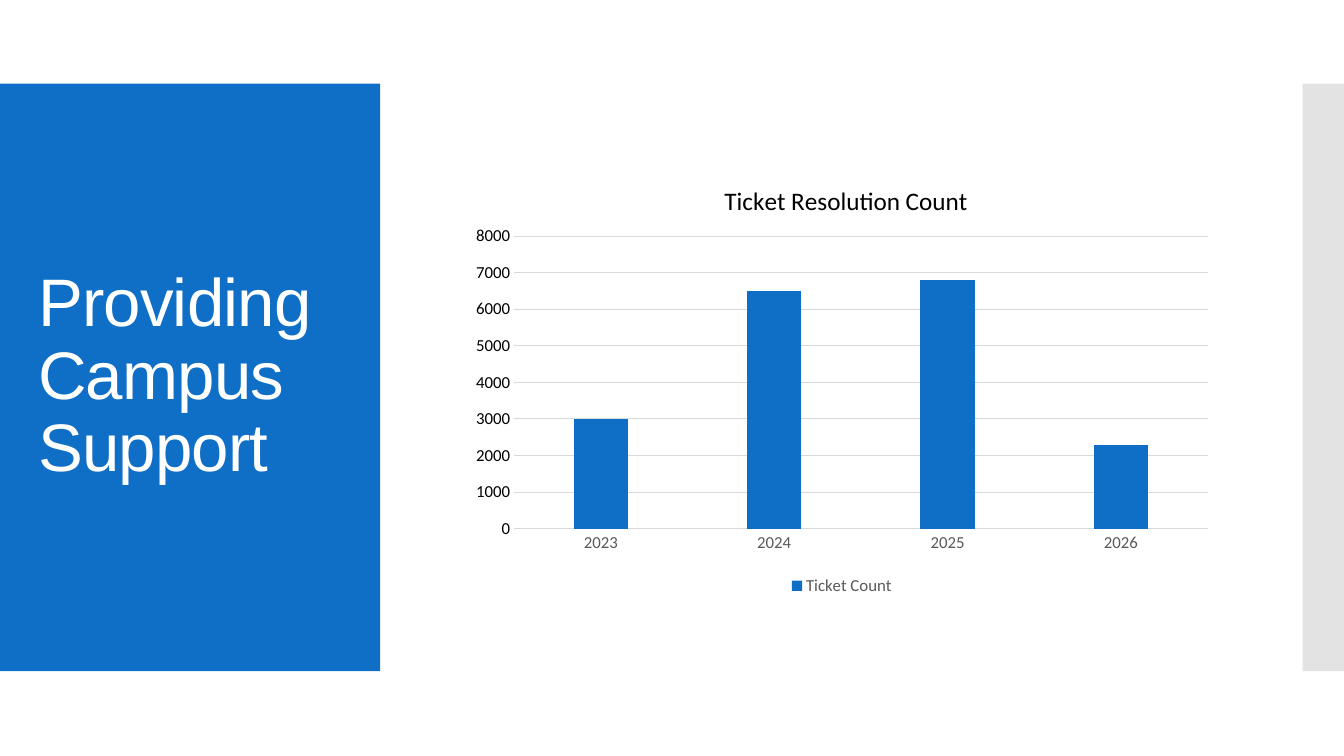
from lxml import etree
from pptx import Presentation
from pptx.chart.data import CategoryChartData as ChartData
from pptx.dml.color import RGBColor as RGB
from pptx.enum.chart import XL_CHART_TYPE as Kind, XL_LEGEND_POSITION as Side
from pptx.enum.chart import XL_TICK_MARK as Tick
from pptx.enum.shapes import MSO_SHAPE as Shape
from pptx.enum.text import MSO_ANCHOR as Anchor
from pptx.oxml import parse_xml
from pptx.oxml.ns import nsdecls, qn
from pptx.util import Inches, Pt

COLORS = {"blue": "0F6FC6", "gray": "C8C8C8", "grid": "D9D9D9",
          "label": "595959", "black": "000000", "white": "FFFFFF"}
TICKETS = {"2023": 3000, "2024": 6500, "2025": 6800, "2026": 2300}


def color(name):
    return RGB.from_string(COLORS[name])


def style(font, size, name, face="Calibri"):
    font.size = Pt(size)
    font.name = face
    font.bold = False
    font.color.rgb = color(name)


def add_band(slide, box, name):
    band = slide.shapes.add_shape(Shape.RECTANGLE, *map(Inches, box))
    band.shadow.inherit = False
    band.fill.solid()
    band.fill.fore_color.rgb = color(name)
    band.line.fill.background()
    return band


def add_title(slide, box, text):
    left, top, width, height = box
    add_band(slide, box, "blue")
    label = slide.shapes.add_textbox(Inches(left + 0.28), Inches(top + 0.4),
                                     Inches(width - 0.55), Inches(height - 0.8))
    frame = label.text_frame
    frame.word_wrap = True
    frame.vertical_anchor = Anchor.MIDDLE
    para = frame.paragraphs[0]
    para.text = text
    para.line_spacing = 0.9
    style(para.font, 48, "white", "Arial")
    para.runs[0].font._element.set("spc", "-60")


def add_edge(slide, box):
    band = add_band(slide, box, "gray")
    # Half transparent
    tint = band.fill._xPr.find(qn("a:solidFill"))[0]
    etree.SubElement(tint, qn("a:alpha")).set("val", "50000")


def set_place(part, **sizes):
    """Place a chart part by fractions of the chart area."""
    inner = '<c:layoutTarget val="inner"/>' if "w" in sizes else ""
    modes = "".join(f'<c:{key}Mode val="edge"/>' for key in "xy")
    spots = "".join(f'<c:{key} val="{val}"/>' for key, val in sizes.items())
    for old in part.findall(qn("c:layout")):
        part.remove(old)
    layout = parse_xml(f'<c:layout {nsdecls("c")}><c:manualLayout>{inner}{modes}'
                       f'{spots}</c:manualLayout></c:layout>')
    text = part.find(qn("c:tx"))
    part.insert(0 if text is None else 1, layout)


def style_axis(axis, name):
    axis.major_tick_mark = axis.minor_tick_mark = Tick.NONE
    style(axis.tick_labels.font, 12, name)


def add_counts(slide, box):
    data = ChartData()
    data.categories = list(TICKETS)
    data.add_series("Ticket Count", list(TICKETS.values()))
    chart = slide.shapes.add_chart(Kind.COLUMN_CLUSTERED, *map(Inches, box),
                                   data).chart
    style(chart.font, 10, "black")

    # Title and legend
    chart.has_title = True
    title = chart.chart_title
    para = title.text_frame.paragraphs[0]
    para.text = "Ticket Resolution Count"
    style(para.font, 18, "black")
    title.include_in_layout = False
    set_place(title._element, x=0.34, y=0.05)
    chart.has_legend = True
    chart.legend.position = Side.BOTTOM
    chart.legend.include_in_layout = False
    style(chart.legend.font, 12, "label")

    # Axes
    years, counts = chart.category_axis, chart.value_axis
    style_axis(years, "label")
    style_axis(counts, "black")
    counts.minimum_scale, counts.maximum_scale = 0, 8000
    counts.major_unit = 1000
    counts.format.line.fill.background()
    for line in (years.format.line, counts.major_gridlines.format.line):
        line.color.rgb = color("grid")
        line.width = Pt(0.75)

    # Bars
    plot = chart.plots[0]
    plot.vary_by_categories = False
    plot.gap_width = 219
    plot.overlap = -27
    fill = plot.series[0].format.fill
    fill.solid()
    fill.fore_color.rgb = color("blue")
    set_place(chart._chartSpace.chart.plotArea, x=0.07, y=0.18, w=0.91, h=0.66)


def main():
    deck = Presentation()
    deck.slide_width, deck.slide_height = Inches(13.33), Inches(7.5)
    slide = deck.slides.add_slide(deck.slide_layouts[6])
    add_title(slide, (0, 0.83, 3.77, 5.83), "Providing Campus Support")
    add_edge(slide, (12.92, 0.83, 0.41, 5.83))
    add_counts(slide, (4.57, 1.55, 7.56, 4.4))
    deck.save("out.pptx")


if __name__ == "__main__":
    main()
